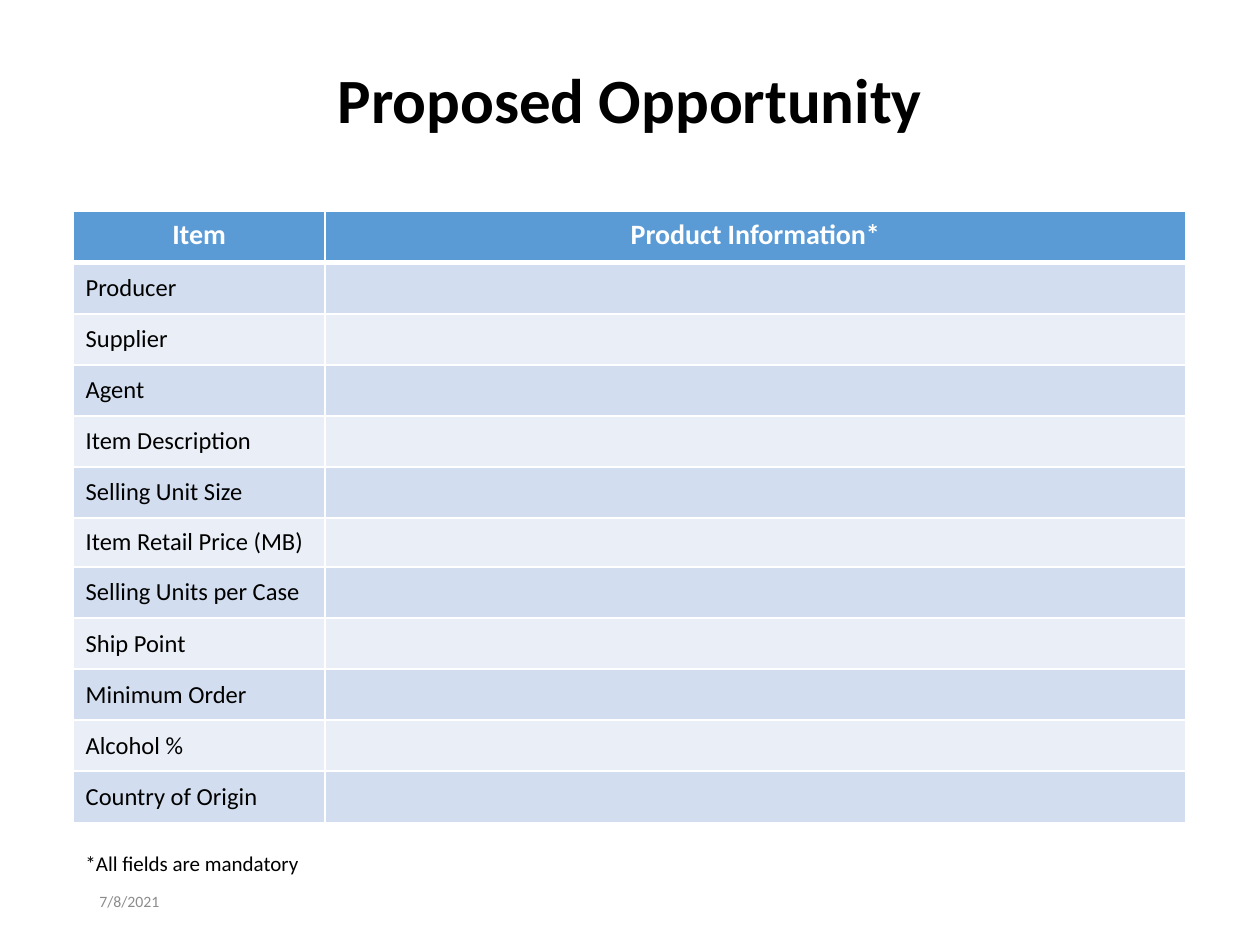
from dataclasses import dataclass

from lxml.etree import SubElement
from pptx import Presentation
from pptx.dml.color import RGBColor
from pptx.enum.text import MSO_ANCHOR as Anchor, PP_ALIGN as Align
from pptx.oxml.ns import qn
from pptx.util import Inches, Pt


@dataclass(frozen=True)
class Theme:
    font: str = "Calibri"
    black: str = "000000"
    white: str = "FFFFFF"
    gray: str = "8C8C8C"
    header: str = "5B9BD5"
    bands: tuple = ("D2DEEF", "EAEFF7")
    title_size: int = 36
    header_size: int = 16
    body_size: int = 14
    note_size: int = 12
    date_size: int = 9
    thin: int = 1
    thick: int = 3


THEME = Theme()
HEADINGS = ("Item", "Product Information*")
PRICE = "Item Retail Price (MB)"
FIELDS = (
    "Producer", "Supplier", "Agent", "Item Description", "Selling Unit Size",
    PRICE, "Selling Units per Case", "Ship Point", "Minimum Order",
    "Alcohol %", "Country of Origin",
)


def write(frame, text, size, color, bold=False, align=Align.LEFT):
    frame.text = text
    para = frame.paragraphs[0]
    para.alignment = align
    for span in para.runs:
        span.font.name = THEME.font
        span.font.size = Pt(size)
        span.font.bold = bold
        span.font.color.rgb = RGBColor.from_string(color)
    return para


def add_text(page, box, text, size, color, anchor=Anchor.MIDDLE, wrap=True, **style):
    frame = page.shapes.add_textbox(*box).text_frame
    frame.word_wrap = wrap
    frame.vertical_anchor = anchor
    return write(frame, text, size, color, **style)


def add_title(page, box):
    para = add_text(page, box, "Proposed Opportunity", THEME.title_size,
                    THEME.black, bold=True, align=Align.CENTER)
    para.line_spacing = 0.9


def style_cell(cell, fill, bottom, top):
    properties = cell._tc.get_or_add_tcPr()
    widths = {"a:lnL": THEME.thin, "a:lnR": THEME.thin, "a:lnT": top, "a:lnB": bottom}
    for side, width in widths.items():
        line = SubElement(properties, qn(side), w=str(Pt(width)))
        SubElement(SubElement(line, qn("a:solidFill")), qn("a:srgbClr"), val=THEME.white)
    cell.fill.solid()
    cell.fill.fore_color.rgb = RGBColor.from_string(fill)


def add_product_table(page, box):
    left, top, width, height = box
    table = page.shapes.add_table(len(FIELDS) + 1, len(HEADINGS), *box).table
    item_width = Inches(2)
    table.columns[0].width = item_width
    table.columns[1].width = width - item_width

    price_height = Inches(0.39)
    row_height = (height - price_height) // len(FIELDS)
    for row in table.rows:
        row.height = row_height
    table.rows[FIELDS.index(PRICE) + 1].height = price_height

    for column, heading in enumerate(HEADINGS):
        cell = table.cell(0, column)
        write(cell.text_frame, heading, THEME.header_size, THEME.white,
              bold=True, align=Align.CENTER)
        style_cell(cell, THEME.header, bottom=THEME.thick, top=THEME.thin)

    for index, field in enumerate(FIELDS):
        fill = THEME.bands[index % len(THEME.bands)]
        top_line = THEME.thin if index else THEME.thick
        for column, text in enumerate((field, "")):
            cell = table.cell(index + 1, column)
            cell.vertical_anchor = Anchor.MIDDLE
            cell.margin_top = cell.margin_bottom = Inches(0.03)
            write(cell.text_frame, text, THEME.body_size, THEME.black)
            style_cell(cell, fill, bottom=THEME.thin, top=top_line)


def add_note(page, box):
    add_text(page, box, "*All fields are mandatory", THEME.note_size,
             THEME.black, anchor=Anchor.TOP, wrap=False)


def add_date(page, box):
    add_text(page, box, "7/8/2021", THEME.date_size, THEME.gray)


def inches(*lengths):
    return tuple(Inches(length) for length in lengths)


def main():
    deck = Presentation()
    deck.slide_width, deck.slide_height = inches(10, 7.5)
    page = deck.slides.add_slide(deck.slide_layouts[6])
    add_title(page, inches(0.69, 0.4, 8.62, 0.84))
    add_date(page, inches(0.69, 6.95, 2.25, 0.4))
    add_product_table(page, inches(0.58, 1.68, 8.83, 4.85))
    add_note(page, inches(0.58, 6.7, 1.91, 0.3))
    deck.save("out.pptx")


if __name__ == "__main__":
    main()
